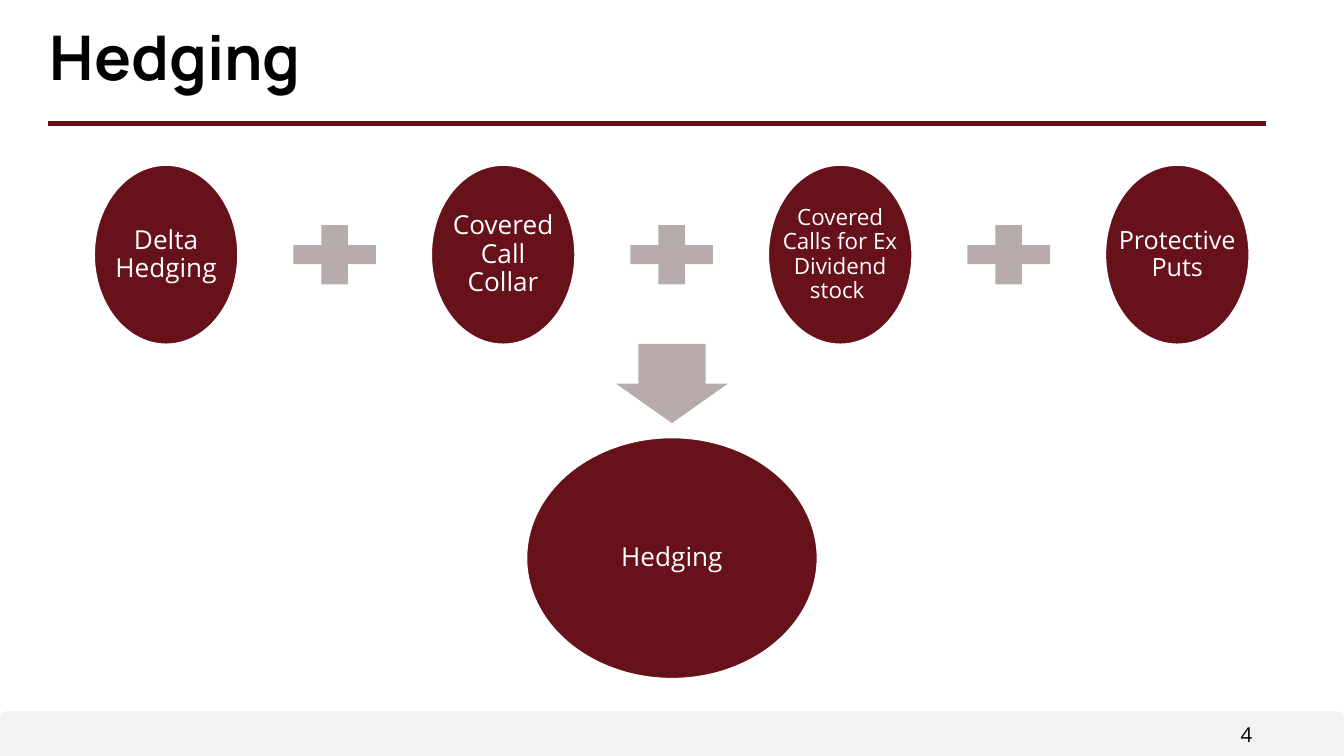
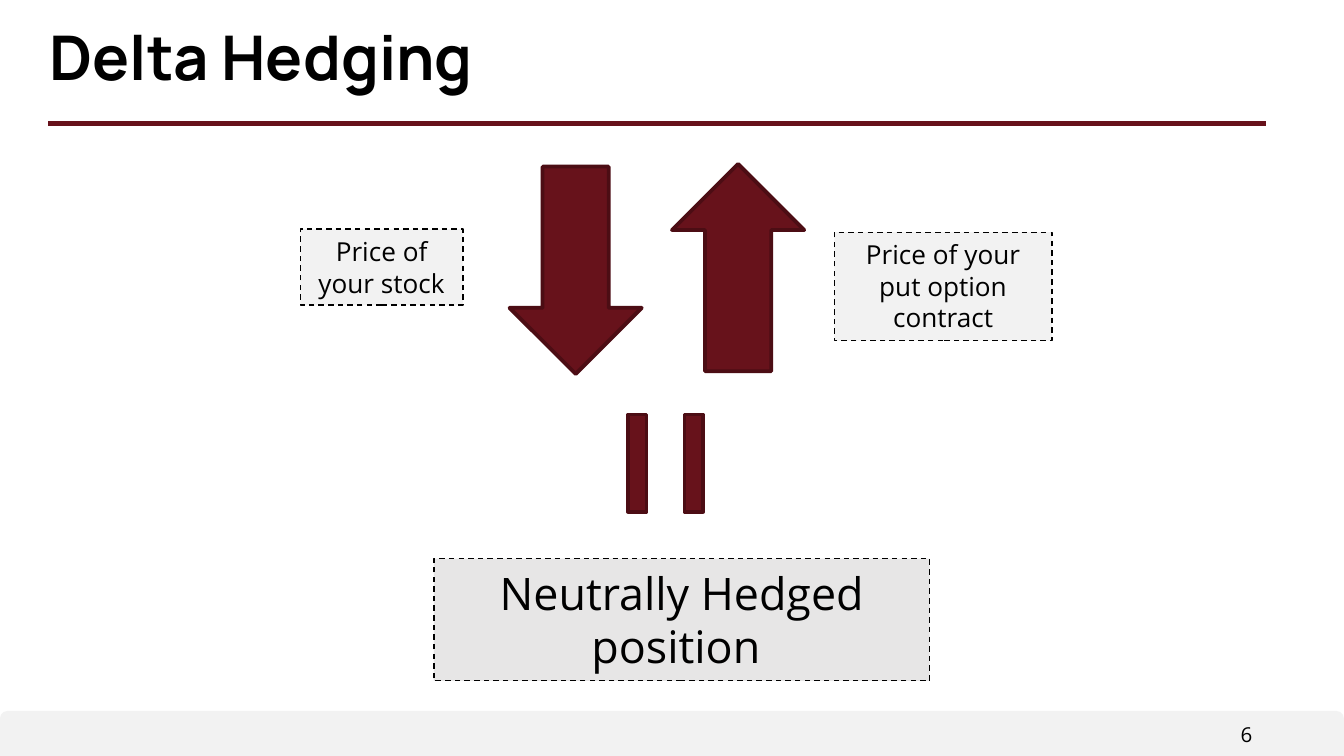
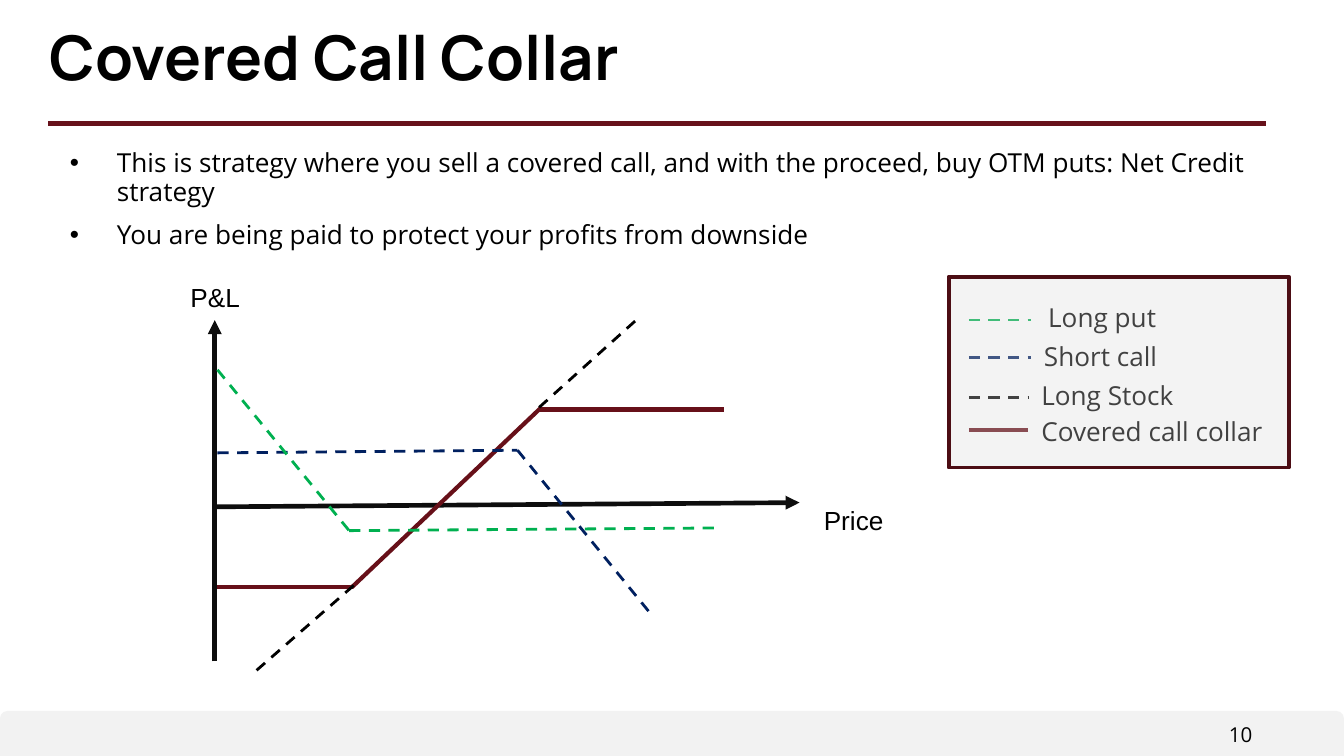
from lxml.etree import SubElement
from pptx import Presentation
from pptx.dml.color import RGBColor
from pptx.enum.dml import MSO_LINE
from pptx.enum.shapes import MSO_CONNECTOR, MSO_SHAPE
from pptx.enum.text import MSO_ANCHOR, PP_ALIGN
from pptx.oxml.ns import qn
from pptx.util import Cm, Pt

MAROON = "67121B"
DARK_MAROON = "4C0D14"
COLLAR_RED = "671019"
GREYED_MAROON = "B8ABAC"
PALE_GREY = "F2F2F2"
MID_GREY = "E7E6E6"
PANEL_GREY = "D9D9D9"
AXIS_BLACK = "0D0D0D"
BLACK = "000000"
WHITE = "FFFFFF"
NAVY = "002060"
GREEN = "00B050"

TITLE_FONT = "Manrope"
BODY_FONT = "Open Sans"
AXIS_FONT = "Arial"

PAGE_WIDTH = 25.4
PAGE_HEIGHT = 14.29


def rgb(value):
    return RGBColor.from_string(value)


def lengths(*values):
    return [Cm(value) for value in values]


class Deck:
    """Holds the shared style and the page being drawn; lengths are in centimetres."""

    def __init__(self):
        self.presentation = Presentation()
        self.presentation.slide_width = Cm(PAGE_WIDTH)
        self.presentation.slide_height = Cm(PAGE_HEIGHT)
        self.page = None

    def start_page(self, title, number):
        blank_layout = self.presentation.slide_layouts[6]
        self.page = self.presentation.slides.add_slide(blank_layout)
        self.shape(MSO_SHAPE.ROUND_2_SAME_RECTANGLE, (0, 13.44, PAGE_WIDTH, 0.85),
                   PALE_GREY, adjustments=(0.167, 0))
        self.text((20.62, 13.54, 3.23, 0.64), [number], size=11,
                  align=PP_ALIGN.RIGHT, insets=(0.18, 0.1))
        self.line((0.91, 2.34), (23.93, 2.34), MAROON, 2.5)
        self.text((0.76, 0.41, 23.65, 1.73), [title], size=33, font=TITLE_FONT,
                  bold=True, spacing=0.9, insets=(0.18, 0.1))

    def outline(self, line, color, width, dashed=False):
        line.color.rgb = rgb(color)
        line.width = Pt(width)
        if dashed:
            line.dash_style = MSO_LINE.DASH

    def paint(self, shape, fill, border=None, border_width=2, dashed=False):
        shape.shadow.inherit = False
        shape.fill.solid()
        shape.fill.fore_color.rgb = rgb(fill)
        if border:
            self.outline(shape.line, border, border_width, dashed)
        else:
            shape.line.fill.background()

    def shape(self, kind, place, fill, border=None, border_width=2, dashed=False,
              adjustments=(), rotation=0):
        shape = self.page.shapes.add_shape(kind, *lengths(*place))
        for index, value in enumerate(adjustments):
            shape.adjustments[index] = value
        shape.rotation = rotation
        self.paint(shape, fill, border, border_width, dashed)
        return shape

    def polygon(self, points, fill):
        corners = [lengths(*point) for point in points]
        builder = self.page.shapes.build_freeform(*corners[0], scale=1.0)
        builder.add_line_segments(corners[1:], close=True)
        self.paint(builder.convert_to_shape(), fill)

    def line(self, start, end, color, width, dashed=False, arrow=False):
        connector = self.page.shapes.add_connector(
            MSO_CONNECTOR.STRAIGHT, *lengths(*start, *end))
        self.outline(connector.line, color, width, dashed)
        properties = connector._element.spPr
        if arrow:
            SubElement(properties.find(qn("a:ln")), qn("a:tailEnd"), type="triangle")
        SubElement(properties, qn("a:effectLst"))

    def fill_frame(self, frame, texts, size, font=BODY_FONT, color=BLACK, bold=False,
                   align=PP_ALIGN.LEFT, spacing=None, space_before=0, bullet=False):
        for index, text in enumerate(texts):
            paragraph = frame.paragraphs[0] if index == 0 else frame.add_paragraph()
            paragraph.text = text
            paragraph.alignment = align
            if spacing:
                paragraph.line_spacing = spacing
            if index and space_before:
                paragraph.space_before = Pt(space_before)
            if bullet:
                properties = paragraph._p.get_or_add_pPr()
                properties.set("marL", str(Cm(1.27)))
                properties.set("indent", str(Cm(-0.89)))
                SubElement(properties, qn("a:buFont"), typeface="Arial")
                SubElement(properties, qn("a:buChar"), char="•")
            paragraph.font.name = font
            paragraph.font.size = Pt(size)
            paragraph.font.bold = bold
            paragraph.font.color.rgb = rgb(color)

    def text(self, place, texts, size=14, insets=(0.25, 0.13), **style):
        frame = self.page.shapes.add_textbox(*lengths(*place)).text_frame
        frame.word_wrap = True
        frame.margin_left = frame.margin_right = Cm(insets[0])
        frame.margin_top = frame.margin_bottom = Cm(insets[1])
        self.fill_frame(frame, texts, size, **style)

    def oval(self, place, label, size):
        frame = self.shape(MSO_SHAPE.OVAL, place, MAROON, WHITE).text_frame
        frame.word_wrap = False
        frame.vertical_anchor = MSO_ANCHOR.MIDDLE
        self.fill_frame(frame, [label], size, color=WHITE, align=PP_ALIGN.CENTER,
                        spacing=0.9)

    def plus(self, center_x, center_y):
        """Draw a plus sign whose upright is thicker than its bar."""
        half_width, half_height, half_upright, half_bar = 0.78, 0.56, 0.25, 0.18
        quarter = [(half_upright, half_height), (half_upright, half_bar),
                   (half_width, half_bar)]
        offsets = []
        for sign_x, sign_y, step in ((1, 1, 1), (1, -1, -1), (-1, -1, 1), (-1, 1, -1)):
            offsets += [(sign_x * x, sign_y * y) for x, y in quarter[::step]]
        self.polygon([(center_x + x, center_y + y) for x, y in offsets], GREYED_MAROON)

    def dashed_box(self, place, label, size=14, fill=PALE_GREY):
        frame = self.shape(MSO_SHAPE.RECTANGLE, place, fill, BLACK, 0.75, True).text_frame
        frame.word_wrap = True
        frame.vertical_anchor = MSO_ANCHOR.TOP
        self.fill_frame(frame, [label], size, align=PP_ALIGN.CENTER)

    def clear_panel(self, place, fill, opacity):
        panel = self.shape(MSO_SHAPE.RECTANGLE, place, fill, DARK_MAROON)
        color = panel._element.spPr.find(qn("a:solidFill"))[0]
        SubElement(color, qn("a:alpha"), val=str(opacity * 1000))


def hedging_page(deck):
    deck.start_page("Hedging", "4")
    strategies = [
        ("Delta\vHedging", 14),
        ("Covered\vCall\vCollar", 14),
        ("Covered\vCalls for Ex\vDividend\vstock ", 12),
        ("Protective\vPuts", 13.5),
    ]
    left, top, width, height, pitch = 1.76, 3.1, 2.76, 3.43, 6.37
    for index, (label, size) in enumerate(strategies):
        oval_left = left + index * pitch
        deck.oval((oval_left, top, width, height), label, size)
        if index < len(strategies) - 1:
            deck.plus(oval_left + (width + pitch) / 2, top + height / 2)
    deck.shape(MSO_SHAPE.DOWN_ARROW, (11.64, 6.5, 2.12, 1.5), GREYED_MAROON,
               adjustments=(0.6, 0.5))
    deck.oval((9.93, 8.25, 5.54, 4.6), "Hedging", 14)


def delta_page(deck):
    deck.start_page("Delta Hedging", "6")
    for kind, left, top in ((MSO_SHAPE.UP_ARROW, 12.7, 3.1),
                            (MSO_SHAPE.DOWN_ARROW, 9.63, 3.15)):
        deck.shape(kind, (left, top, 2.5, 3.92), MAROON, DARK_MAROON)
    deck.dashed_box((15.77, 4.39, 4.11, 2.05), "Price of your put option contract")
    deck.dashed_box((5.68, 4.33, 3.07, 1.44), "Price of your stock")
    deck.shape(MSO_SHAPE.MATH_EQUAL, (11.33, 7.93, 2.5, 1.65), MAROON, DARK_MAROON,
               adjustments=(0.213, 0.434), rotation=270)
    deck.dashed_box((8.2, 10.56, 9.37, 2.31), "Neutrally Hedged position ", 24, MID_GREY)


def collar_page(deck):
    deck.start_page("Covered Call Collar", "10")
    deck.text((0.76, 2.74, 23.65, 10.26), [
        "This is strategy where you sell a covered call, and with the proceed, "
        "buy OTM puts: Net Credit strategy",
        "You are being paid to protect your profits from downside",
    ], spacing=0.9, space_before=8, bullet=True, insets=(0.18, 0.1))

    for start, end in (((4.06, 9.58), (15.11, 9.5)), ((4.06, 12.5), (4.06, 6.05))):
        deck.line(start, end, AXIS_BLACK, 2.5, arrow=True)
    deck.text((3.35, 5.18, 1.45, 0.86), ["P&L"], font=AXIS_FONT)
    deck.text((15.32, 9.4, 2.59, 0.86), ["Price"], font=AXIS_FONT)

    collar = (COLLAR_RED, 2.25, False)
    stock = (BLACK, 1.5, True)
    call = (NAVY, 1.5, True)
    put = (GREEN, 1.5, True)
    payoffs = [
        (collar, (4.11, 11.1), (6.68, 11.1)),
        (collar, (6.65, 11.1), (10.21, 7.72)),
        (collar, (10.19, 7.74), (13.69, 7.74)),
        (stock, (10.19, 7.7), (12.09, 5.99)),
        (stock, (4.85, 12.67), (6.76, 11)),
        (call, (4.11, 8.56), (9.78, 8.51)),
        (call, (9.78, 8.51), (12.32, 11.63)),
        (put, (6.6, 10.03), (13.49, 9.98)),
        (put, (4.11, 6.99), (6.68, 10.13)),
    ]
    for style, start, end in payoffs:
        deck.line(start, end, *style)

    legend = [
        ("Long put", put, 6.05, 19.48, (19.56, 5.56)),
        ("Short call", call, 6.76, 19.48, (19.48, 6.3)),
        ("Long Stock", stock, 7.52, 19.43, (19.43, 7.04)),
        ("Covered call collar", collar, 8.13, 19.43, (19.43, 7.72)),
    ]
    for label, style, sample_top, sample_right, corner in legend:
        deck.line((18.31, sample_top), (sample_right, sample_top), *style)
        deck.text((*corner, 4.72, 0.86), [label])
    deck.clear_panel((17.93, 5.23, 6.43, 3.61), PANEL_GREY, 30)


def main():
    deck = Deck()
    hedging_page(deck)
    delta_page(deck)
    collar_page(deck)
    deck.presentation.save("out.pptx")


if __name__ == "__main__":
    main()
